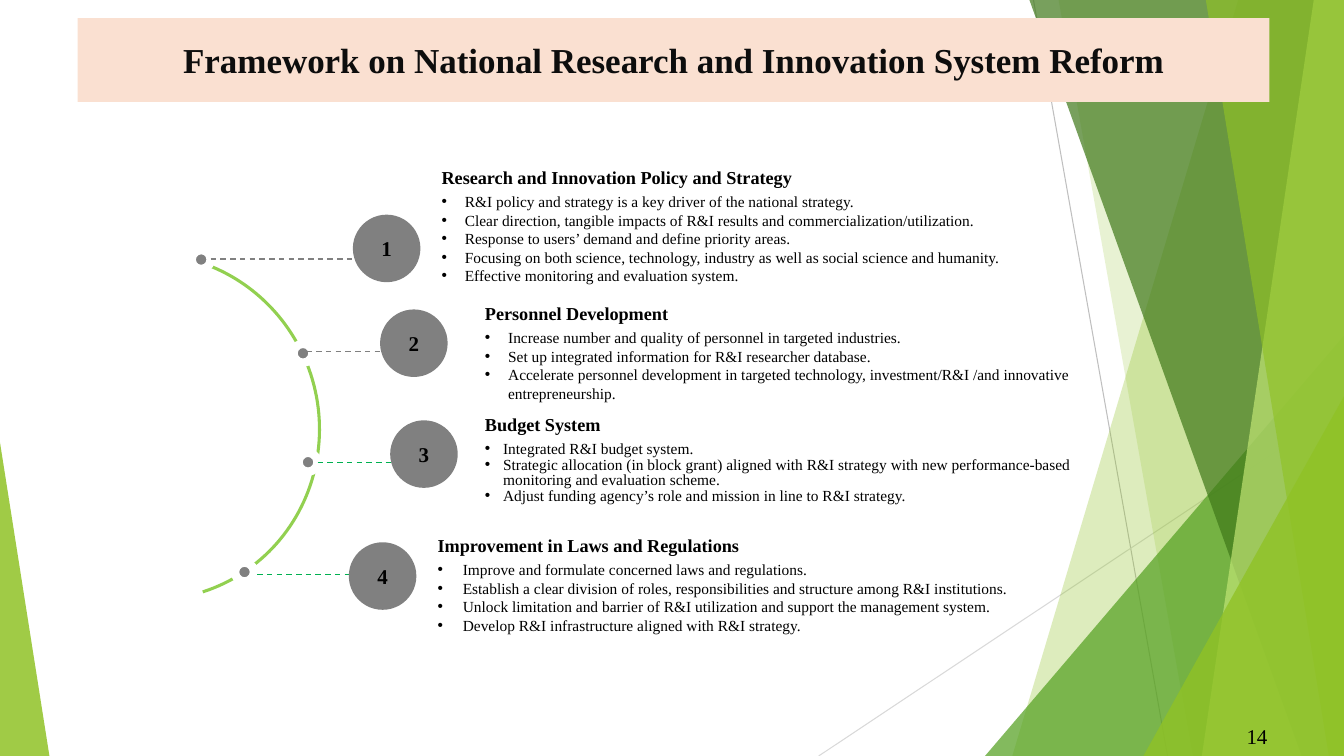
import pptx
import pptx.util
import pptx.dml.color
import pptx.enum.dml
import pptx.enum.shapes
import pptx.enum.text
import pptx.oxml.ns
import lxml.etree

Inches = pptx.util.Inches
Pt = pptx.util.Pt
KIND = pptx.enum.shapes.MSO_SHAPE
ALIGN = pptx.enum.text.PP_ALIGN
ANCHOR = pptx.enum.text.MSO_ANCHOR
qn = pptx.oxml.ns.qn

COLORS = {
    "black": "000000", "ink": "0D0D0D", "white": "FFFFFF", "grey": "808080",
    "silver": "BFBFBF", "mist": "D9D9D9", "peach": "FAE0D1",
    "lime": "90C226", "leaf": "54A021", "pine": "3F7819", "pale": "C0E474",
    "arc": "92D050", "dash": "00B050",
}

# Corner points, colour, opacity in percent
BACK_BANDS = [
    ([(12.28, 0), (13.33, 0), (13.33, 7.5), (10.04, 7.5)], "lime", 30),
    ([(10.5, 0), (13.33, 0), (13.33, 7.5), (11.83, 7.5)], "lime", 20),
]
FRONT_BANDS = [
    ([(10.21, 0), (13.33, 0), (13.33, 7.5), (12.91, 7.5)], "pine", 70),
    ([(13.03, 0), (13.33, 0), (13.33, 7.5), (11.92, 7.5)], "pale", 70),
    ([(11.96, 0), (13.33, 0), (13.33, 7.5), (13.18, 7.5)], "lime", 65),
]

# Dot corner, dash start and end, dash colour, badge corner
STEPS = [
    ((1.9, 2.48), (2.09, 2.57), (4.15, 2.57), "grey", (3.5, 2.13)),
    ((2.91, 3.41), (3.04, 3.49), (4.37, 3.49), "grey", (3.77, 3.07)),
    ((2.96, 4.49), (3.15, 4.59), (4.11, 4.59), "dash", (3.87, 4.17)),
    ((2.33, 5.58), (2.55, 5.7), (3.84, 5.7), "dash", (3.46, 5.38)),
]

# Box, bullet indent, line spacing, heading, points
TOPICS = [
    ((4.28, 1.6, 7.1, 1.45), 0.23, 1.0, "Research and Innovation Policy and Strategy", [
        "R&I policy and strategy is a key driver of the national strategy.",
        "Clear direction, tangible impacts of R&I results and commercialization/utilization.",
        "Response to users’ demand and define priority areas.",
        "Focusing on both science, technology, industry as well as social science and humanity.",
        "Effective monitoring and evaluation system."]),
    ((4.71, 2.95, 6.79, 1.1), 0.23, 1.0, "Personnel Development", [
        "Increase number and quality of personnel in targeted industries.",
        "Set up integrated information for R&I researcher database.",
        "Accelerate personnel development in targeted technology, investment/R&I /and "
        "innovative entrepreneurship."]),
    ((4.71, 4.08, 6.14, 0.99), 0.18, 0.85, "Budget System", [
        "Integrated R&I budget system.",
        "Strategic allocation (in block grant) aligned with R&I strategy with new "
        "performance-based monitoring and evaluation scheme.",
        "Adjust funding agency’s role and mission in line to R&I strategy."]),
    ((4.24, 5.25, 7.18, 1.29), 0.25, 1.0, "Improvement in Laws and Regulations", [
        "Improve and formulate concerned laws and regulations.",
        "Establish a clear division of roles, responsibilities and structure among R&I institutions.",
        "Unlock limitation and barrier of R&I utilization and support the management system.",
        "Develop R&I infrastructure aligned with R&I strategy."]),
]


def rgb(name):
    return pptx.dml.color.RGBColor.from_string(COLORS[name])


def write(para, text, size=11, color="black", bold=False, align=ALIGN.LEFT,
          before=0, lines=1.0, indent=0):
    """Fill a paragraph; a positive indent also gives it a bullet."""
    para.alignment = align
    para.space_before, para.space_after = Pt(before), Pt(0)
    para.line_spacing = lines
    run = para.add_run()
    run.text = text
    run.font.name = "Times New Roman"
    run.font.size = Pt(size)
    run.font.bold = bold
    run.font.color.rgb = rgb(color)
    props = para._p.get_or_add_pPr()
    props.set("marL", str(Inches(indent)))
    props.set("indent", str(-Inches(indent)))
    if indent:
        font = lxml.etree.SubElement(props, qn("a:buFont"))
        font.set("typeface", "Arial")
        lxml.etree.SubElement(props, qn("a:buChar")).set("char", "•")
    else:
        lxml.etree.SubElement(props, qn("a:buNone"))


class Deck:
    """Holds the current slide and draws styled elements on it."""

    def __init__(self, slide):
        self.slide = slide
        self.shapes = slide.shapes

    def paint(self, shape, color, alpha=100, edge=None):
        shape.shadow.inherit = False
        shape.fill.solid()
        shape.fill.fore_color.rgb = rgb(color)
        if alpha < 100:
            tone = shape.fill._xPr.find(".//" + qn("a:srgbClr"))
            lxml.etree.SubElement(tone, qn("a:alpha")).set("val", str(alpha * 1000))
        if edge:
            shape.line.color.rgb = rgb("white")
            shape.line.width = Pt(edge)
        else:
            shape.line.fill.background()
        return shape

    def shape(self, kind, box, color, adjust=(), **look):
        item = self.shapes.add_shape(kind, *map(Inches, box))
        for index, value in enumerate(adjust):
            item.adjustments[index] = value
        return self.paint(item, color, **look)

    def band(self, points, color, alpha):
        points = [(Inches(x), Inches(y)) for x, y in points]
        path = self.shapes.build_freeform(*points[0])
        path.add_line_segments(points[1:], close=True)
        self.paint(path.convert_to_shape(), color, alpha)

    def line(self, start, end, color, width, dash=False):
        item = self.shapes.add_connector(
            pptx.enum.shapes.MSO_CONNECTOR.STRAIGHT, *map(Inches, start + end))
        item.line.color.rgb = rgb(color)
        item.line.width = Pt(width)
        if dash:
            item.line.dash_style = pptx.enum.dml.MSO_LINE.DASH
        lxml.etree.SubElement(item.element.spPr, qn("a:effectLst"))

    def frame(self, item, anchor):
        frame = item.text_frame
        frame.word_wrap = True
        frame.auto_size = pptx.enum.text.MSO_AUTO_SIZE.NONE
        frame.vertical_anchor = anchor
        return frame

    def holder(self, index, box, anchor):
        """Place a placeholder in front of what is drawn so far."""
        item = self.slide.placeholders[index]
        item.left, item.top, item.width, item.height = map(Inches, box)
        item.element.getparent().append(item.element)
        return item, self.frame(item, anchor)

    def title(self, text, box):
        item, frame = self.holder(0, box, ANCHOR.MIDDLE)
        item.fill.solid()
        item.fill.fore_color.rgb = rgb("peach")
        write(frame.paragraphs[0], text, size=25, color="ink", bold=True, align=ALIGN.CENTER)

    def topic(self, index, box, indent, lines, head, points):
        frame = self.holder(index, box, ANCHOR.TOP)[1]
        write(frame.paragraphs[0], head, size=13, bold=True, lines=lines)
        for rank, point in enumerate(points):
            write(frame.add_paragraph(), point, indent=indent,
                  before=0 if rank else 3, lines=lines if rank else 1.0)

    def badge(self, number, spot):
        item = self.shape(KIND.OVAL, spot + (0.67, 0.67), "grey")
        frame = self.frame(item, ANCHOR.MIDDLE)
        write(frame.paragraphs[0], str(number), size=15, bold=True, align=ALIGN.CENTER)

    def label(self, text, box):
        item = self.shapes.add_textbox(*map(Inches, box))
        frame = self.frame(item, ANCHOR.MIDDLE)
        write(frame.paragraphs[0], text, size=15, align=ALIGN.RIGHT)


def main():
    show = pptx.Presentation()
    show.slide_width, show.slide_height = Inches(13.33), Inches(7.5)
    comparison = show.slide_layouts[4]
    deck = Deck(show.slides.add_slide(comparison))

    deck.line((10.25, 0), (11.58, 7.5), "silver", 0.75)
    deck.line((13.33, 4.03), (8.12, 7.5), "mist", 0.75)
    for band in BACK_BANDS:
        deck.band(*band)
    deck.shape(KIND.ISOSCELES_TRIANGLE, (9.77, 3.33, 3.56, 4.17), "leaf", [1], alpha=72)
    for band in FRONT_BANDS:
        deck.band(*band)
    deck.shape(KIND.ISOSCELES_TRIANGLE, (11.34, 3.93, 1.99, 3.57), "lime", [1], alpha=80)
    deck.shape(KIND.ISOSCELES_TRIANGLE, (0, 4.39, 0.49, 3.11), "lime", [0], alpha=85)

    arc = deck.shape(KIND.BLOCK_ARC, (-0.25, 2.54, 3.47, 3.39), "arc", [128.92, 0.12, 0.009])
    arc.rotation = 72
    for number, (dot, start, end, color, spot) in enumerate(STEPS, 1):
        deck.shape(KIND.OVAL, dot + (0.19, 0.19), "grey", edge=6)
        deck.line(start, end, color, 1, dash=True)
        deck.badge(number, spot)
    for index, topic in enumerate(TOPICS, 1):
        deck.topic(index, *topic)

    deck.title("Framework on National Research and Innovation System Reform",
               (0.77, 0.18, 11.82, 0.83))
    deck.label("14", (9.97, 7.1, 2.7, 0.4))
    show.save("out.pptx")


if __name__ == "__main__":
    main()
